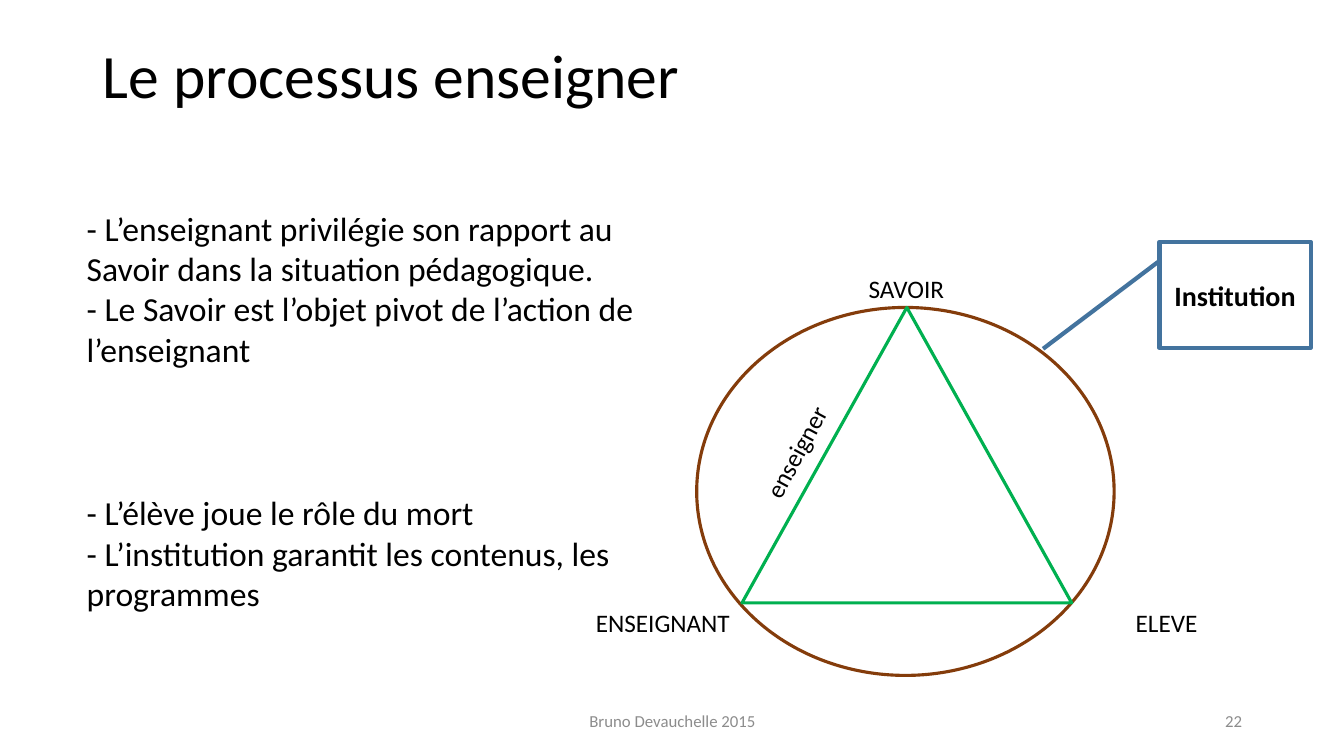
from lxml.etree import SubElement
from pptx import Presentation
from pptx.dml.color import RGBColor
from pptx.enum.shapes import MSO_SHAPE
from pptx.enum.text import MSO_ANCHOR, MSO_AUTO_SIZE, PP_ALIGN
from pptx.oxml.ns import qn
from pptx.util import Inches, Pt

BLACK = RGBColor(0x00, 0x00, 0x00)
WHITE = RGBColor(0xFF, 0xFF, 0xFF)
GREY = RGBColor(0x8C, 0x8C, 0x8C)
BROWN = RGBColor(0x84, 0x3C, 0x0B)
GREEN = RGBColor(0x00, 0xB0, 0x50)
BLUE = RGBColor(0x43, 0x73, 0x9E)

SLIDE_WIDTH, SLIDE_HEIGHT = Inches(13.33), Inches(7.5)
LEFT, CENTER, RIGHT = PP_ALIGN.LEFT, PP_ALIGN.CENTER, PP_ALIGN.RIGHT
TOP, MIDDLE = MSO_ANCHOR.TOP, MSO_ANCHOR.MIDDLE

CIRCLE_TOP, CORNER_TOP, FOOTER_TOP = 40.67, 79.73, 92.67
LABEL_HEIGHT, FOOTER_HEIGHT = 4, 5.33

TITLE = "Le processus enseigner"
TITLE_AREA = (6.9, 5.33, 86.27, 12.53)
BODY_AREA = (5.7, 26.8, 43.96, 55.2)
BODY_SIZE = 24
GROUP_GAP = Pt(88)
GROUPS = [
    [
        "- L’enseignant privilégie son rapport au Savoir dans la situation pédagogique.",
        "- Le Savoir est l’objet pivot de l’action de l’enseignant",
    ],
    [
        "- L’élève joue le rôle du mort",
        "- L’institution garantit les contenus, les programmes",
    ],
]
OUTLINES = [
    (MSO_SHAPE.OVAL, (51.84, CIRCLE_TOP, 31.06, 48.67), BROWN, 2.25),
    (MSO_SHAPE.ISOSCELES_TRIANGLE, (55.21, CIRCLE_TOP, 24.53, 39.07), GREEN, 2.25),
]
CALLOUT = (MSO_SHAPE.LINE_CALLOUT_1, (86.27, 32, 11.25, 14), BLUE, 3)
CALLOUT_POINTS = (0.19, -0.01, 1.01, -0.77)
LABELS = [
    ("SAVOIR", (61.14, 35.47, 12.6, LABEL_HEIGHT), CENTER, 0),
    ("ELEVE", (81.92, CORNER_TOP, 9.75, LABEL_HEIGHT), CENTER, 0),
    ("ENSEIGNANT", (43.59, CORNER_TOP, 11.55, LABEL_HEIGHT), LEFT, 0),
    ("enseigner", (53.41, 57.47, 10.95, LABEL_HEIGHT), CENTER, 298.4),
]
FOOTERS = [
    ("Bruno Devauchelle 2015", (33.16, FOOTER_TOP, 33.76, FOOTER_HEIGHT), CENTER),
    ("22", (70.67, FOOTER_TOP, 22.5, FOOTER_HEIGHT), RIGHT),
]


def apply(target, values):
    for name, value in values.items():
        setattr(target, name, value)


def place(area):
    sides = (SLIDE_WIDTH, SLIDE_HEIGHT) * 2
    return [round(share * side / 100) for share, side in zip(area, sides)]


def move(box, area):
    apply(box, dict(zip(("left", "top", "width", "height"), place(area))))


def write(paragraph, text, size, color=BLACK, align=LEFT, bold=False, **spacing):
    span = paragraph.add_run()
    span.text = text
    apply(paragraph, {"alignment": align, **spacing})
    apply(span.font, {"name": "Calibri", "size": Pt(size), "bold": bold})
    span.font.color.rgb = color


def set_frame(box, anchor, fit=MSO_AUTO_SIZE.NONE):
    frame = box.text_frame
    apply(frame, {"word_wrap": True, "auto_size": fit, "vertical_anchor": anchor})
    return frame


def add_outline(page, kind, area, color, width):
    shape = page.shapes.add_shape(kind, *place(area))
    shape.shadow.inherit = False
    shape.fill.solid()
    shape.fill.fore_color.rgb = WHITE
    shape.line.color.rgb = color
    shape.line.width = Pt(width)
    return shape


def add_text(page, area, anchor, text, size, fit=MSO_AUTO_SIZE.NONE, **style):
    box = page.shapes.add_textbox(*place(area))
    write(set_frame(box, anchor, fit).paragraphs[0], text, size, **style)
    return box


def add_body(page):
    body = page.placeholders[1]
    move(body, BODY_AREA)
    frame = set_frame(body, TOP)
    lines = [
        (text, GROUP_GAP if group and not row else Pt(0))
        for group, texts in enumerate(GROUPS)
        for row, text in enumerate(texts)
    ]
    for index, (text, gap) in enumerate(lines):
        paragraph = frame.add_paragraph() if index else frame.paragraphs[0]
        properties = paragraph._p.get_or_add_pPr()
        properties.set("marL", "0")
        properties.set("indent", "0")
        SubElement(properties, qn("a:buNone"))
        write(paragraph, text, BODY_SIZE, space_before=gap)


def main():
    deck = Presentation()
    apply(deck, {"slide_width": SLIDE_WIDTH, "slide_height": SLIDE_HEIGHT})
    page = deck.slides.add_slide(deck.slide_layouts[1])

    title = page.shapes.title
    move(title, TITLE_AREA)
    write(set_frame(title, TOP).paragraphs[0], TITLE, 44, line_spacing=0.9)
    add_body(page)

    for outline in OUTLINES:
        add_outline(page, *outline)
    callout = add_outline(page, *CALLOUT)
    for index, point in enumerate(CALLOUT_POINTS):
        callout.adjustments[index] = point
    paragraph = set_frame(callout, MIDDLE).paragraphs[0]
    write(paragraph, "Institution", 20, align=CENTER, bold=True)

    for text, area, align, angle in LABELS:
        label = add_text(page, area, TOP, text, 18, MSO_AUTO_SIZE.SHAPE_TO_FIT_TEXT, align=align)
        label.rotation = angle
    for text, area, align in FOOTERS:
        add_text(page, area, MIDDLE, text, 12, color=GREY, align=align)

    deck.save("out.pptx")


if __name__ == "__main__":
    main()
